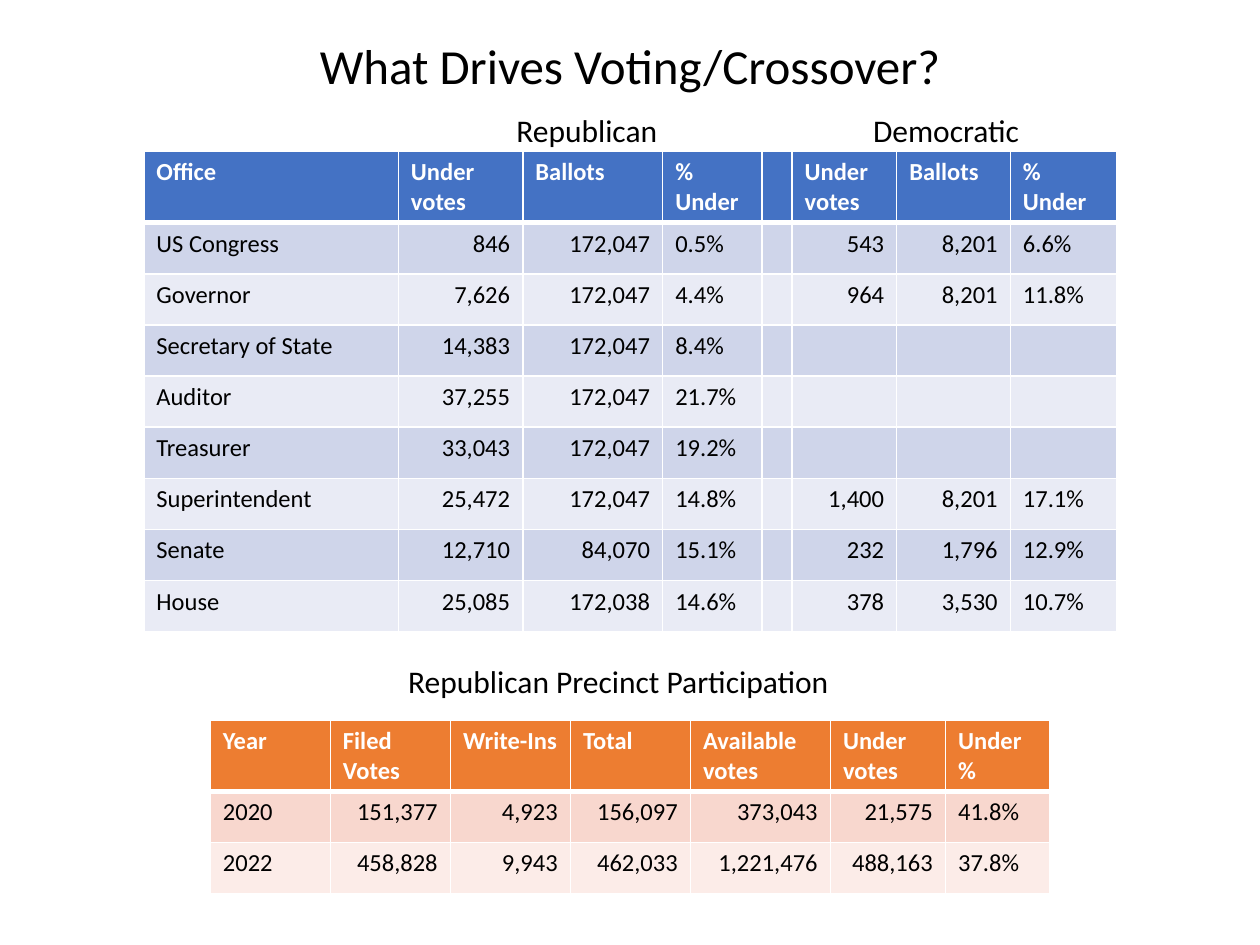
from dataclasses import dataclass

from lxml import etree
from pptx import Presentation
from pptx.dml.color import RGBColor
from pptx.enum.text import MSO_ANCHOR, MSO_AUTO_SIZE, PP_ALIGN
from pptx.oxml.ns import qn
from pptx.slide import Slide
from pptx.table import _Cell
from pptx.text.text import TextFrame
from pptx.util import Cm, Pt

FONT = "Calibri"
BLACK = RGBColor(0x00, 0x00, 0x00)
WHITE = RGBColor(0xFF, 0xFF, 0xFF)
BLUE = RGBColor(0x44, 0x72, 0xC4)
BLUE_BAND = RGBColor(0xCF, 0xD5, 0xEA)
BLUE_LIGHT = RGBColor(0xE9, 0xEB, 0xF5)
ORANGE = RGBColor(0xED, 0x7D, 0x31)
ORANGE_BAND = RGBColor(0xF8, 0xD7, 0xCE)
ORANGE_LIGHT = RGBColor(0xFC, 0xEC, 0xE8)

LEFT, CENTER, RIGHT = PP_ALIGN.LEFT, PP_ALIGN.CENTER, PP_ALIGN.RIGHT
TOP = MSO_ANCHOR.TOP
FIT_SHAPE = MSO_AUTO_SIZE.SHAPE_TO_FIT_TEXT

TITLE_ONLY_LAYOUT = 5
HEADER_HEIGHT = 1.44
ROW_HEIGHT = 1.03
THIN, THICK = 1, 3


@dataclass(frozen=True)
class Caption:
    text: str
    left: float
    top: float
    width: float


@dataclass(frozen=True)
class TableBlock:
    left: float
    top: float
    column_widths: tuple[float, ...]
    header_fill: RGBColor
    band_fills: tuple[RGBColor, RGBColor]
    rows: tuple[tuple[str, ...], ...]


NO_CONTEST = ("", "", "", "")

OFFICES = TableBlock(
    left=2.9,
    top=3.05,
    column_widths=(5.13, 2.51, 2.82, 2, 0.6, 2.11, 2.29, 2.15),
    header_fill=BLUE,
    band_fills=(BLUE_BAND, BLUE_LIGHT),
    rows=(
        ("Office", "Under votes", "Ballots", "% Under", "", "Under votes", "Ballots", "% Under"),
        ("US Congress", "846", "172,047", "0.5%", "", "543", "8,201", "6.6%"),
        ("Governor", "7,626", "172,047", "4.4%", "", "964", "8,201", "11.8%"),
        ("Secretary of State", "14,383", "172,047", "8.4%", *NO_CONTEST),
        ("Auditor", "37,255", "172,047", "21.7%", *NO_CONTEST),
        ("Treasurer", "33,043", "172,047", "19.2%", *NO_CONTEST),
        ("Superintendent", "25,472", "172,047", "14.8%", "", "1,400", "8,201", "17.1%"),
        ("Senate", "12,710", "84,070", "15.1%", "", "232", "1,796", "12.9%"),
        ("House", "25,085", "172,038", "14.6%", "", "378", "3,530", "10.7%"),
    ),
)

PRECINCTS = TableBlock(
    left=4.24,
    top=14.51,
    column_widths=(2.42, 2.42, 2.42, 2.42, 2.82, 2.32, 2.11),
    header_fill=ORANGE,
    band_fills=(ORANGE_BAND, ORANGE_LIGHT),
    rows=(
        ("Year", "Filed Votes", "Write-Ins", "Total", "Available votes", "Under votes", "Under %"),
        ("2020", "151,377", "4,923", "156,097", "373,043", "21,575", "41.8%"),
        ("2022", "458,828", "9,943", "462,033", "1,221,476", "488,163", "37.8%"),
    ),
)

CAPTIONS = (
    Caption("Republican", 10.16, 2.11, 3.38),
    Caption("Democratic", 17.35, 2.11, 3.51),
    Caption("Republican Precinct Participation", 7.98, 13.23, 9.42),
)


def write_text(
    text_frame: TextFrame,
    text: str,
    size: int,
    color: RGBColor = BLACK,
    bold: bool = False,
    alignment: PP_ALIGN = LEFT,
) -> None:
    text_frame.text = text
    paragraph = text_frame.paragraphs[0]
    paragraph.alignment = alignment
    for run in paragraph.runs:
        run.font.name = FONT
        run.font.size = Pt(size)
        run.font.bold = bold
        run.font.color.rgb = color


def fit_to_text(text_frame: TextFrame) -> None:
    text_frame.word_wrap = False
    text_frame.auto_size = FIT_SHAPE
    text_frame.vertical_anchor = TOP


def set_borders(cell: _Cell, top: int, bottom: int) -> None:
    """Draw white cell borders; the schema wants them ahead of the fill."""
    properties = cell._tc.get_or_add_tcPr()
    widths = {"a:lnL": THIN, "a:lnR": THIN, "a:lnT": top, "a:lnB": bottom}
    for position, (tag, width) in enumerate(widths.items()):
        line = etree.Element(qn(tag), w=str(Pt(width)))
        solid_fill = etree.SubElement(line, qn("a:solidFill"))
        etree.SubElement(solid_fill, qn("a:srgbClr"), val=str(WHITE))
        properties.insert(position, line)


def add_title(slide: Slide, text: str) -> None:
    title = slide.shapes.title
    title.left, title.top = Cm(6.01), Cm(0.59)
    title.width, title.height = Cm(13.38), Cm(1.45)
    write_text(title.text_frame, text, 28, alignment=CENTER)
    fit_to_text(title.text_frame)


def add_caption(slide: Slide, caption: Caption) -> None:
    box = slide.shapes.add_textbox(
        Cm(caption.left), Cm(caption.top), Cm(caption.width), Cm(1.03)
    )
    write_text(box.text_frame, caption.text, 18)
    fit_to_text(box.text_frame)


def add_table(slide: Slide, block: TableBlock) -> None:
    height = HEADER_HEIGHT + ROW_HEIGHT * (len(block.rows) - 1)
    table = slide.shapes.add_table(
        len(block.rows),
        len(block.column_widths),
        Cm(block.left),
        Cm(block.top),
        Cm(sum(block.column_widths)),
        Cm(height),
    ).table
    for column, width in zip(table.columns, block.column_widths):
        column.width = Cm(width)
    for row_index, values in enumerate(block.rows):
        is_header = row_index == 0
        table.rows[row_index].height = Cm(HEADER_HEIGHT if is_header else ROW_HEIGHT)
        fill = block.header_fill if is_header else block.band_fills[(row_index - 1) % 2]
        for column_index, value in enumerate(values):
            cell = table.cell(row_index, column_index)
            cell.fill.solid()
            cell.fill.fore_color.rgb = fill
            set_borders(
                cell,
                top=THICK if row_index == 1 else THIN,
                bottom=THICK if is_header else THIN,
            )
            is_count = not is_header and column_index > 0 and not value.endswith("%")
            write_text(
                cell.text_frame,
                value,
                14,
                color=WHITE if is_header else BLACK,
                bold=is_header,
                alignment=RIGHT if is_count else LEFT,
            )


def main() -> None:
    presentation = Presentation()
    presentation.slide_width, presentation.slide_height = Cm(25.4), Cm(19.05)
    slide = presentation.slides.add_slide(presentation.slide_layouts[TITLE_ONLY_LAYOUT])
    add_title(slide, "What Drives Voting/Crossover?")
    for block in (OFFICES, PRECINCTS):
        add_table(slide, block)
    for caption in CAPTIONS:
        add_caption(slide, caption)
    presentation.save("out.pptx")


if __name__ == "__main__":
    main()
